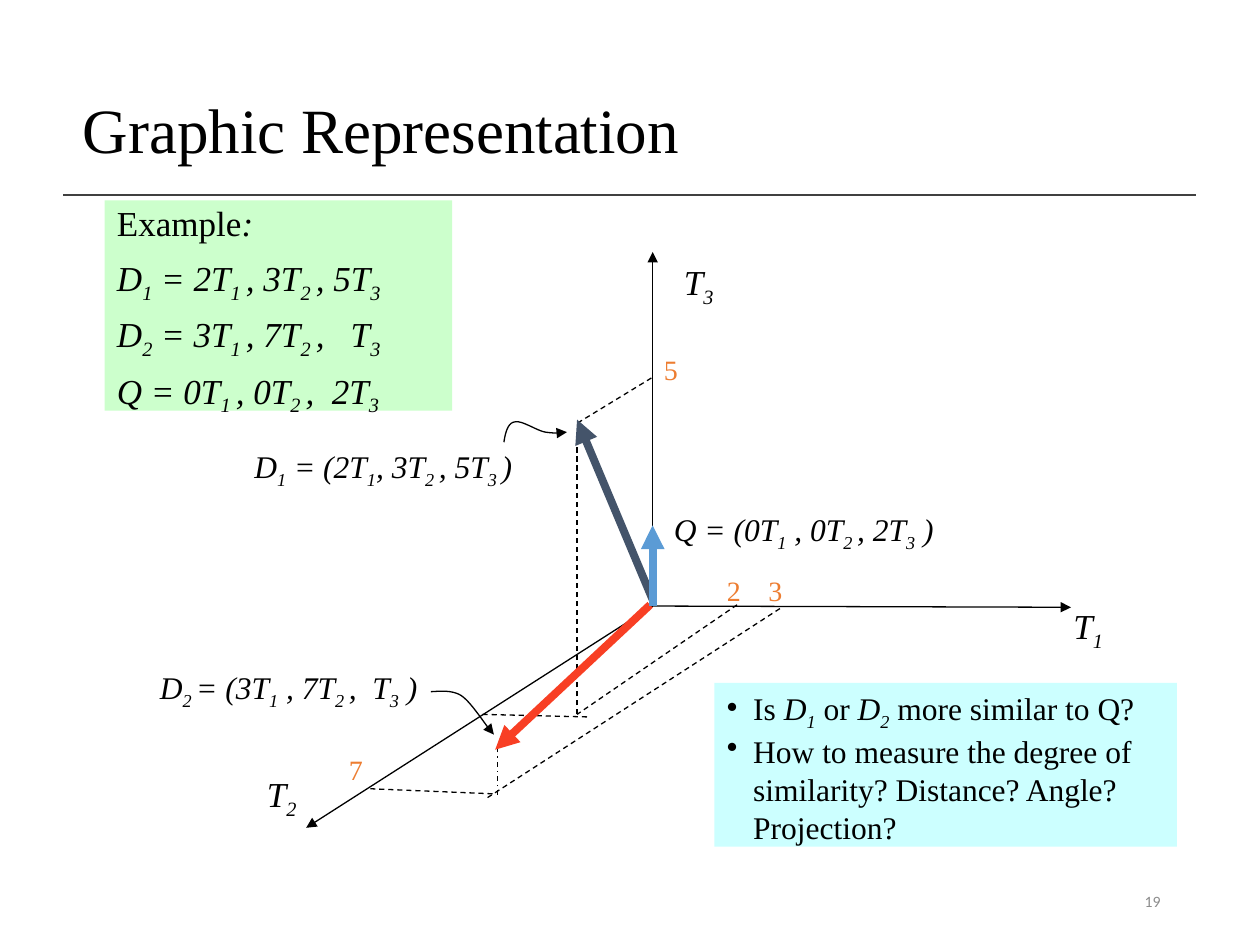
import lxml.etree
import pptx
import pptx.dml.color
import pptx.enum.dml
import pptx.enum.shapes
import pptx.enum.text
import pptx.oxml.ns
import pptx.util

Inches = pptx.util.Inches
Pt = pptx.util.Pt
qn = pptx.oxml.ns.qn
DASH = pptx.enum.dml.MSO_LINE.DASH
DASH_DOT = pptx.enum.dml.MSO_LINE.DASH_DOT
MIDDLE = pptx.enum.text.MSO_ANCHOR.MIDDLE

COLORS = {
    "text": "000000", "rule": "404040", "number": "8C8C8C", "tick": "ED7D31",
    "example": "CCFFCC", "questions": "CCFFFF",
    "d1": "44546A", "d2": "F83F24", "query": "5B9BD5",
}


def rgb(name):
    return pptx.dml.color.RGBColor.from_string(COLORS[name])


def write_markup(paragraph, markup, size, color="text", font="Times New Roman"):
    """Write text in which *...* is italic and _..._ is subscript."""
    for i, styled in enumerate(markup.split("*")):
        for j, piece in enumerate(styled.split("_")):
            if not piece:
                continue
            run = paragraph.add_run()
            run.text = piece
            run.font.name = font
            run.font.size = Pt(size)
            run.font.color.rgb = rgb(color)
            run.font.italic = i % 2 == 1
            if j % 2:
                run.font._element.set("baseline", "-25000")


def add_text(slide, box, markup, size, **style):
    text_box = slide.shapes.add_textbox(*map(Inches, box))
    text_box.text_frame.word_wrap = True
    write_markup(text_box.text_frame.paragraphs[0], markup, size, **style)
    return text_box


def add_label(slide, box, markup, size, color="text"):
    """Add a one-line label that grows with its text."""
    frame = add_text(slide, box, markup, size, color=color).text_frame
    frame.word_wrap = False
    frame.auto_size = pptx.enum.text.MSO_AUTO_SIZE.SHAPE_TO_FIT_TEXT


def add_panel(slide, box, color, lines, size):
    panel = slide.shapes.add_shape(
        pptx.enum.shapes.MSO_SHAPE.RECTANGLE, *map(Inches, box))
    panel.shadow.inherit = False
    panel.fill.solid()
    panel.fill.fore_color.rgb = rgb(color)
    panel.line.fill.background()
    frame = panel.text_frame
    frame.word_wrap = True
    frame.vertical_anchor = pptx.enum.text.MSO_ANCHOR.TOP
    for index, line in enumerate(lines):
        paragraph = frame.add_paragraph() if index else frame.paragraphs[0]
        paragraph.alignment = pptx.enum.text.PP_ALIGN.LEFT
        write_markup(paragraph, line, size)
    return frame.paragraphs


def set_indent(paragraph, indent):
    properties = paragraph._p.get_or_add_pPr()
    properties.set("marL", str(Inches(indent)))
    properties.set("indent", str(-Inches(indent)))
    return properties


def style_line(shape, color, width, dash=None, arrow=False):
    shape.line.color.rgb = rgb(color)
    shape.line.width = Pt(width)
    if dash:
        shape.line.dash_style = dash
    if arrow:
        line = shape.line._get_or_add_ln()
        lxml.etree.SubElement(line, qn("a:tailEnd"), type="triangle")


def add_line(slide, start, end, color="text", width=0.75, **style):
    connector = slide.shapes.add_connector(
        pptx.enum.shapes.MSO_CONNECTOR.STRAIGHT, *map(Inches, start + end))
    style_line(connector, color, width, **style)
    lxml.etree.SubElement(connector._element.spPr, qn("a:effectLst"))


def add_curved_arrow(slide, points, steps=12):
    """Draw chained cubic curves: a start, then three points for each curve."""
    outline = []
    for first in range(0, len(points) - 1, 3):
        curve = points[first:first + 4]
        for step in range(1, steps + 1):
            t = step / steps
            weights = ((1 - t) ** 3, 3 * t * (1 - t) ** 2, 3 * t * t * (1 - t), t ** 3)
            outline.append(tuple(
                Inches(sum(w * p[axis] for w, p in zip(weights, curve)))
                for axis in (0, 1)))
    builder = slide.shapes.build_freeform(*map(Inches, points[0]))
    builder.add_line_segments(outline, close=False)
    arrow = builder.convert_to_shape()
    arrow.shadow.inherit = False
    arrow.fill.background()
    style_line(arrow, "text", 0.75, arrow=True)


def add_header(slide, left, top, width):
    add_line(slide, (left, top + 0.92), (left + width, top + 0.92), "rule", 1)
    title = add_text(slide, (left + 0.06, top, 8.62, 0.86), "Graphic Representation", 36)
    title.text_frame.vertical_anchor = MIDDLE
    title.text_frame.paragraphs[0].line_spacing = 0.9


def add_example(slide, box):
    lines = ["Example*:*", "*D_1_ = 2T_1 _, 3T_2 _, 5T_3_*",
             "*D_2_ = 3T_1 _, 7T_2 _,   T_3_*", "*Q = 0T_1 _, 0T_2 _,  2T_3_*"]
    for paragraph in add_panel(slide, box, "example", lines, 20):
        set_indent(paragraph, 0.19)
        paragraph.line_spacing = 0.9
        paragraph.space_before = Pt(7.5)


def add_vector_space(slide, left, top):
    def at(x, y):
        return left + x, top + y

    origin = at(4.18, 2.81)
    for end in (at(7.5, 2.82), at(1.43, 4.57), at(4.18, 0)):
        add_line(slide, origin, end, arrow=True)

    projections = [
        (at(4.85, 2.8), at(3.58, 3.67)), (at(2.83, 3.67), at(3.66, 3.69)),
        (at(3.58, 3.67), at(3.58, 1.5)), (at(4.17, 1), at(3.58, 1.36)),
        (at(5.19, 2.83), at(2.87, 4.33)), (at(2.91, 4.3), at(1.94, 4.26)),
    ]
    for start, end in projections:
        add_line(slide, start, end, dash=DASH)
    add_line(slide, at(2.95, 4.31), at(2.95, 3.92), dash=DASH_DOT)

    vectors = [
        (at(4.18, 2.76), at(3.58, 1.33), "d1"),
        (at(4.16, 2.8), at(2.93, 3.95), "d2"),
        (origin, at(4.18, 2.17), "query"),
    ]
    for start, end, color in vectors:
        add_line(slide, start, end, color, 4.5, arrow=True)

    for index, x, y in ((1, 7.42, 2.75), (2, 1.02, 4.08), (3, 4.33, 0.02)):
        add_label(slide, at(x, y) + (0.45, 0.43), f"*T_{index}_*", 20)
    for value, x, y in ((7, 1.67, 3.92), (3, 5, 2.5), (2, 4.67, 2.5), (5, 4.17, 0.75)):
        add_label(slide, at(x, y) + (0.31, 0.37), str(value), 16, "tick")

    vector_labels = [
        (0.92, 1.5, 2.45, "*D_1_ = (2T_1_, 3T_2 _, 5T_3 _)*"),
        (0.17, 3.25, 2.34, "*D_2 _= (3T_1_ , 7T_2 _,  T_3_ )*"),
        (4.25, 2, 2.34, "*Q = (0T_1_ , 0T_2 _, 2T_3_ )*"),
    ]
    for x, y, width, markup in vector_labels:
        add_label(slide, at(x, y) + (width, 0.4), markup, 18)

    add_curved_arrow(slide, [
        at(3, 1.51), at(3.01, 1.44), at(3.03, 1.36), at(3.08, 1.35),
        at(3.14, 1.33), at(3.26, 1.42), at(3.33, 1.43),
        at(3.4, 1.44), at(3.45, 1.44), at(3.5, 1.43)])
    add_curved_arrow(slide, [
        at(2.42, 3.49), at(2.46, 3.49), at(2.58, 3.47), at(2.66, 3.52),
        at(2.75, 3.58), at(2.86, 3.77), at(2.92, 3.83)])


def add_questions(slide, box):
    lines = ["Is *D_1_* or *D_2_* more similar to Q?",
             "How to measure the degree of similarity? Distance? Angle? Projection?"]
    for paragraph in add_panel(slide, box, "questions", lines, 18):
        properties = set_indent(paragraph, 0.21)
        lxml.etree.SubElement(properties, qn("a:buChar"), char="•")


def add_slide_number(slide, box):
    frame = add_text(slide, box, "19", 9, color="number", font="Calibri").text_frame
    frame.vertical_anchor = MIDDLE
    frame.paragraphs[0].alignment = pptx.enum.text.PP_ALIGN.RIGHT


def main():
    presentation = pptx.Presentation()
    presentation.slide_width = Inches(10)
    presentation.slide_height = Inches(7.5)
    slide = presentation.slides.add_slide(presentation.slide_layouts[6])
    add_header(slide, 0.5, 0.63, 8.99)
    add_example(slide, (0.83, 1.59, 2.76, 1.67))
    add_vector_space(slide, 1, 2)
    add_questions(slide, (5.67, 5.42, 3.67, 1.3))
    add_slide_number(slide, (7.06, 6.95, 2.25, 0.4))
    presentation.save("out.pptx")


if __name__ == "__main__":
    main()
